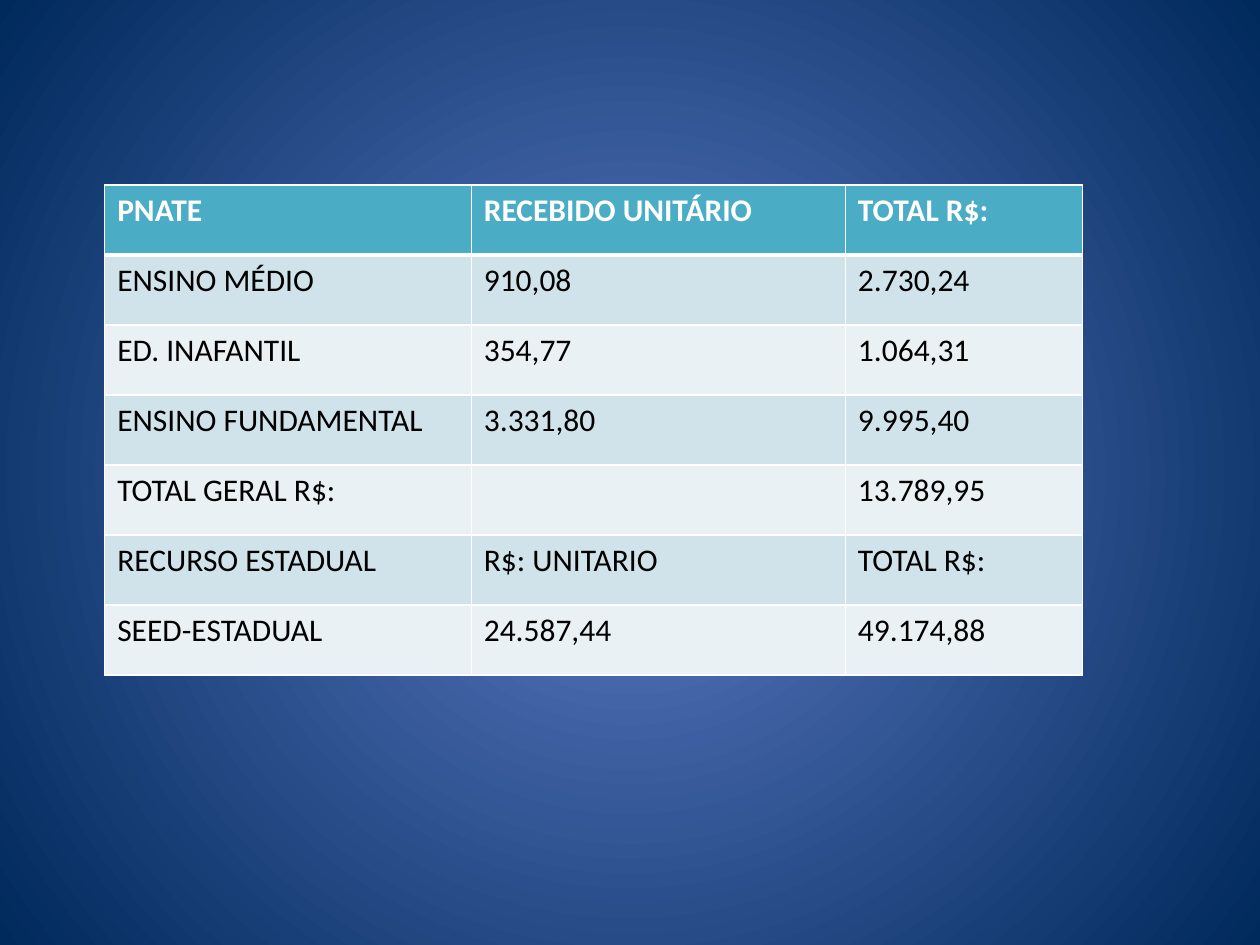
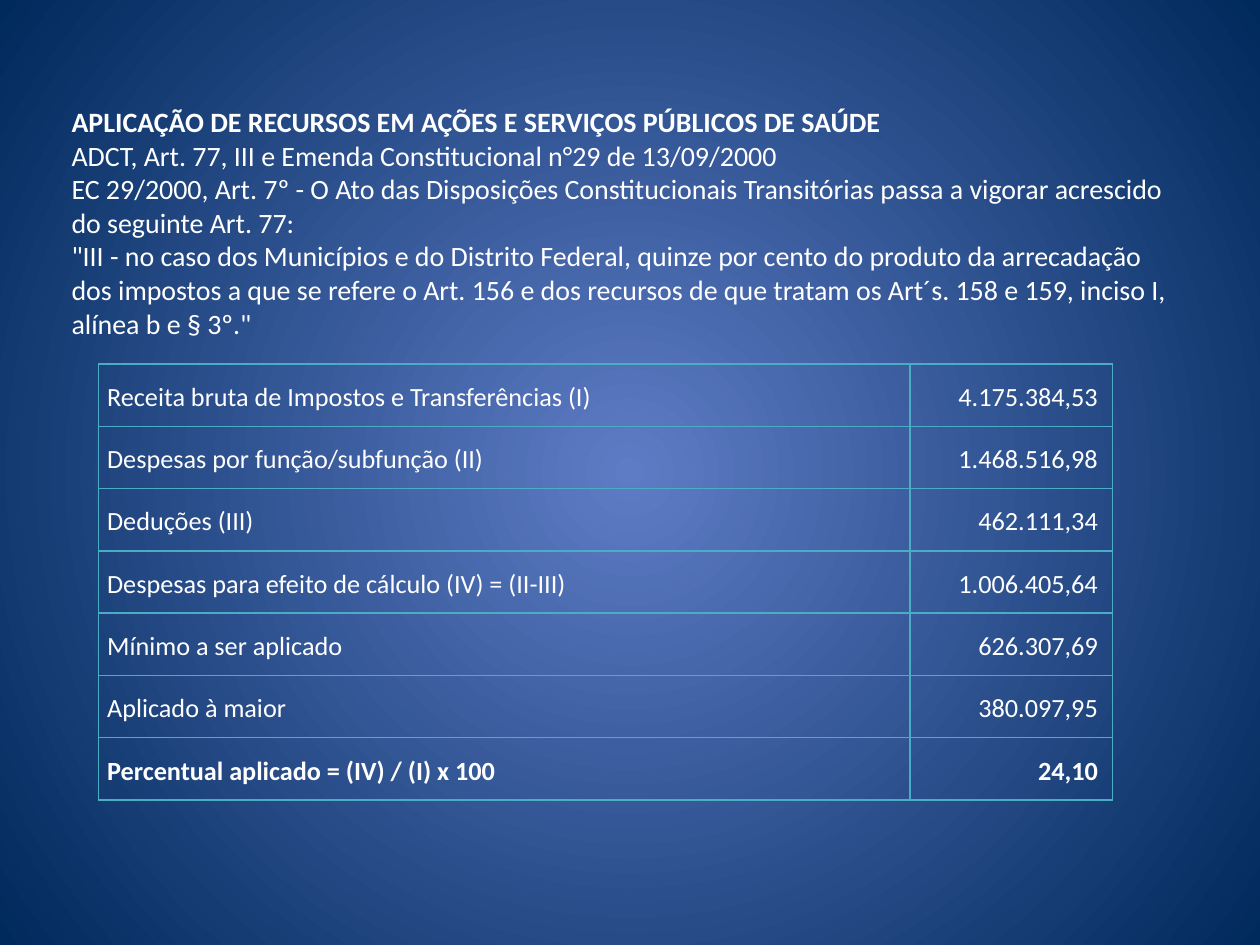
"""Build two slides with school transport and public health funding tables."""
from dataclasses import dataclass

from lxml import etree
from pptx import Presentation
from pptx.dml.color import RGBColor
from pptx.enum.text import MSO_ANCHOR, MSO_AUTO_SIZE, PP_ALIGN
from pptx.oxml.ns import qn
from pptx.util import Pt

LEFT, RIGHT = PP_ALIGN.LEFT, PP_ALIGN.RIGHT
TOP, MIDDLE = MSO_ANCHOR.TOP, MSO_ANCHOR.MIDDLE
FIT_SHAPE = MSO_AUTO_SIZE.SHAPE_TO_FIT_TEXT


@dataclass(frozen=True)
class Theme:
    font: str = "Calibri"
    glow: str = "5E7CC5"
    navy: str = "00295C"
    white: str = "FFFFFF"
    black: str = "000000"
    teal: str = "4BACC6"
    bands: tuple = ("E9F1F5", "D0E3EA")
    funding_size: int = 18
    law_size: int = 16
    health_size: int = 15


theme = Theme()


def write(paragraph, text, size, color=theme.white, bold=False, align=LEFT, spacing=1.0):
    paragraph.alignment = align
    paragraph.line_spacing = spacing
    if not text:
        return
    run = paragraph.add_run()
    run.text = text
    run.font.name = theme.font
    run.font.size = Pt(size)
    run.font.bold = bold
    run.font.color.rgb = RGBColor.from_string(color)


def add_grid(slide, left, top, widths, row_height, row_count, border, header_line=1):
    frame = slide.shapes.add_table(row_count, len(widths), Pt(left), Pt(top),
                                   Pt(sum(widths)), Pt(row_height * row_count))
    table = frame.table
    table.first_row = table.horz_banding = False
    for column, width in zip(table.columns, widths):
        column.width = Pt(width)
    for index, row in enumerate(table.rows):
        row.height = Pt(row_height)
        line_widths = {
            "L": 1,
            "R": 1,
            "T": header_line if index == 1 else 1,
            "B": header_line if index == 0 else 1,
        }
        for cell in row.cells:
            cell.fill.background()
            properties = cell.fill._xPr
            for position, (side, width) in enumerate(line_widths.items()):
                line = etree.Element(qn(f"a:ln{side}"), w=str(Pt(width)))
                fill = etree.SubElement(line, qn("a:solidFill"))
                etree.SubElement(fill, qn("a:srgbClr"), val=border)
                properties.insert(position, line)
    return table


presentation = Presentation()
presentation.slide_width = Pt(720)
presentation.slide_height = Pt(540)
blank_layout = presentation.slide_layouts[6]

slides = [presentation.slides.add_slide(blank_layout) for _ in range(2)]
for slide in slides:
    background = slide.background.fill
    background.gradient()
    for stop, color in zip(background.gradient_stops, (theme.glow, theme.navy)):
        stop.color.rgb = RGBColor.from_string(color)
    gradient = slide.element.find(".//" + qn("a:gradFill"))
    gradient.remove(gradient.find(qn("a:lin")))
    circle = etree.SubElement(gradient, qn("a:path"), attrib={"path": "circle"})
    etree.SubElement(circle, qn("a:fillToRect"), l="50000", t="50000", r="50000", b="50000")

funding_slide, health_slide = slides

funding_rows = [
    ("PNATE", "RECEBIDO UNITÁRIO", "TOTAL R$:"),
    ("ENSINO MÉDIO", "910,08", "2.730,24"),
    ("ED. INAFANTIL", "354,77", "1.064,31"),
    ("ENSINO FUNDAMENTAL", "3.331,80", "9.995,40"),
    ("TOTAL GERAL R$:", "", "13.789,95"),
    ("RECURSO ESTADUAL", "R$: UNITARIO", "TOTAL R$:"),
    ("SEED-ESTADUAL", "24.587,44", "49.174,88"),
]
funding_table = add_grid(funding_slide, 59.8, 105.8, (209.5, 213.8, 135.4), 40,
                         len(funding_rows), theme.white, header_line=3)
for row_index, (row, texts) in enumerate(zip(funding_table.rows, funding_rows)):
    is_header = row_index == 0
    fill_color = theme.teal if is_header else theme.bands[row_index % 2]
    for cell, text in zip(row.cells, texts):
        cell.fill.solid()
        cell.fill.fore_color.rgb = RGBColor.from_string(fill_color)
        cell.vertical_anchor = TOP
        write(cell.text_frame.paragraphs[0], text, theme.funding_size, bold=is_header,
              color=theme.white if is_header else theme.black)

law_texts = [
    "APLICAÇÃO DE RECURSOS EM AÇÕES E SERVIÇOS PÚBLICOS DE SAÚDE",
    "ADCT, Art. 77, III e Emenda Constitucional n°29 de 13/09/2000",
    "EC 29/2000, Art. 7º - O Ato das Disposições Constitucionais Transitórias passa a "
    "vigorar acrescido do seguinte Art. 77:",
    '"III - no caso dos Municípios e do Distrito Federal, quinze por cento do produto da '
    "arrecadação dos impostos a que se refere o Art. 156 e dos recursos de que tratam os "
    'Art´s. 158 e 159, inciso I, alínea b e § 3º."',
]
law_box = health_slide.shapes.add_textbox(Pt(33.8), Pt(56.2), Pt(641.5), Pt(143.3))
law_frame = law_box.text_frame
law_frame.word_wrap = True
law_frame.auto_size = FIT_SHAPE
for index, text in enumerate(law_texts):
    paragraph = law_frame.add_paragraph() if index else law_frame.paragraphs[0]
    write(paragraph, text, theme.law_size, bold=index == 0)

health_rows = [
    ("Receita bruta de Impostos e Transferências (I)", "4.175.384,53"),
    ("Despesas por função/subfunção (II)", "1.468.516,98"),
    ("Deduções (III)", "462.111,34"),
    ("Despesas para efeito de cálculo (IV) = (II-III)", "1.006.405,64"),
    ("Mínimo a ser aplicado", "626.307,69"),
    ("Aplicado à maior", "380.097,95"),
    ("Percentual aplicado = (IV) / (I) x 100", "24,10"),
]
health_table = add_grid(health_slide, 56.2, 208, (463.7, 115.9), 35.6,
                        len(health_rows), theme.teal)
for row, texts in zip(health_table.rows, health_rows):
    is_result = texts == health_rows[-1]
    for cell, text, align, right_margin in zip(row.cells, texts, (LEFT, RIGHT), (5, 8.4)):
        cell.vertical_anchor = MIDDLE
        cell.margin_left, cell.margin_right = Pt(5), Pt(right_margin)
        cell.margin_top = cell.margin_bottom = Pt(0.7)
        write(cell.text_frame.paragraphs[0], text, theme.health_size, bold=is_result,
              align=align, spacing=1.15)

presentation.save("out.pptx")
